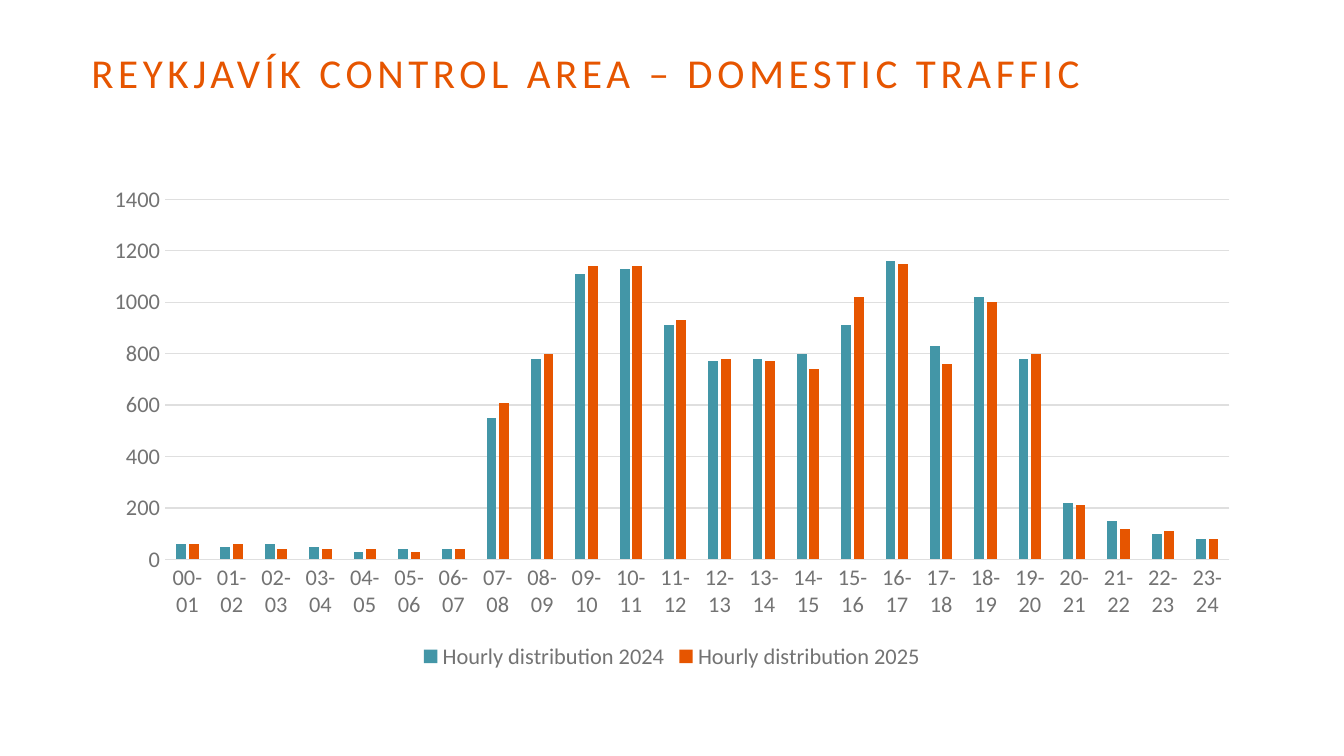
from dataclasses import dataclass

from pptx import Presentation
from pptx.chart.data import CategoryChartData as ChartData
from pptx.dml.color import RGBColor as RGB
from pptx.enum.chart import XL_CHART_TYPE as Kind
from pptx.enum.chart import XL_LEGEND_POSITION as Spot
from pptx.enum.chart import XL_TICK_MARK as Tick
from pptx.enum.text import MSO_ANCHOR as Anchor
from pptx.util import Pt

ORANGE = RGB(0xE6, 0x55, 0x00)
TEAL = RGB(0x43, 0x96, 0xA7)
GREY = RGB(0x73, 0x73, 0x73)
PALE = RGB(0xDF, 0xDF, 0xDF)
FACE = "Calibri"
WIDE, HIGH = Pt(720), Pt(405)


@dataclass
class Area:
    """A box given as percentages of the slide's size."""
    left: float
    top: float
    width: float
    height: float

    def box(self) -> tuple[int, ...]:
        return (int(self.left * WIDE / 100), int(self.top * HIGH / 100),
                int(self.width * WIDE / 100), int(self.height * HIGH / 100))


@dataclass
class Year:
    name: str
    color: RGB
    counts: list[int]


TITLE = Area(6.8, 3.6, 80.9, 11.9)
CHART = Area(6.8, 23.3, 86.4, 66)
HOURS = [f"{h:02}-{h + 1:02}" for h in range(24)]
YEARS = [
    Year("Hourly distribution 2024", TEAL,
         [60, 50, 60, 50, 30, 40, 40, 550, 780, 1110, 1130, 910,
          770, 780, 800, 910, 1160, 830, 1020, 780, 220, 150, 100, 80]),
    Year("Hourly distribution 2025", ORANGE,
         [60, 60, 40, 40, 40, 30, 40, 610, 800, 1140, 1140, 930,
          780, 770, 740, 1020, 1150, 760, 1000, 800, 210, 120, 110, 80]),
]


def style(font, size: float, color: RGB) -> None:
    font.name, font.size, font.bold = FACE, Pt(size), False
    font.color.rgb = color


def rule(line) -> None:
    line.color.rgb, line.width = PALE, Pt(0.75)


def add_title(slide, text: str) -> None:
    frame = slide.shapes.add_textbox(*TITLE.box()).text_frame
    frame.word_wrap = True
    frame.vertical_anchor = Anchor.MIDDLE
    frame.margin_left = frame.margin_right = 0
    frame.margin_top = frame.margin_bottom = 0
    frame.text = text
    para = frame.paragraphs[0]
    para.line_spacing = Pt(26)
    run = para.runs[0]
    style(run.font, 22, ORANGE)
    run._r.get_or_add_rPr().set("spc", "250")


def add_bars(slide) -> None:
    data = ChartData()
    data.categories = HOURS
    for year in YEARS:
        data.add_series(year.name, year.counts)
    chart = slide.shapes.add_chart(
        Kind.COLUMN_CLUSTERED, *CHART.box(), data).chart
    chart.has_title = False
    style(chart.font, 12, GREY)

    plot = chart.plots[0]
    plot.gap_width, plot.overlap = 219, -27
    plot.vary_by_categories = False
    for bars, year in zip(plot.series, YEARS):
        bars.format.fill.solid()
        bars.format.fill.fore_color.rgb = year.color

    hours, scale = chart.category_axis, chart.value_axis
    for axis in (hours, scale):
        axis.major_tick_mark = axis.minor_tick_mark = Tick.NONE
        style(axis.tick_labels.font, 12, GREY)
    rule(hours.format.line)
    scale.format.line.fill.background()
    scale.minimum_scale, scale.maximum_scale = 0, 1400
    scale.major_unit = 200
    rule(scale.major_gridlines.format.line)

    chart.has_legend = True
    chart.legend.position = Spot.BOTTOM
    chart.legend.include_in_layout = False
    style(chart.legend.font, 12, GREY)


def main() -> None:
    deck = Presentation()
    deck.slide_width, deck.slide_height = WIDE, HIGH
    slide = deck.slides.add_slide(deck.slide_layouts[6])
    add_title(slide, "REYKJAVÍK CONTROL AREA – DOMESTIC TRAFFIC")
    add_bars(slide)
    deck.save("out.pptx")


if __name__ == "__main__":
    main()
